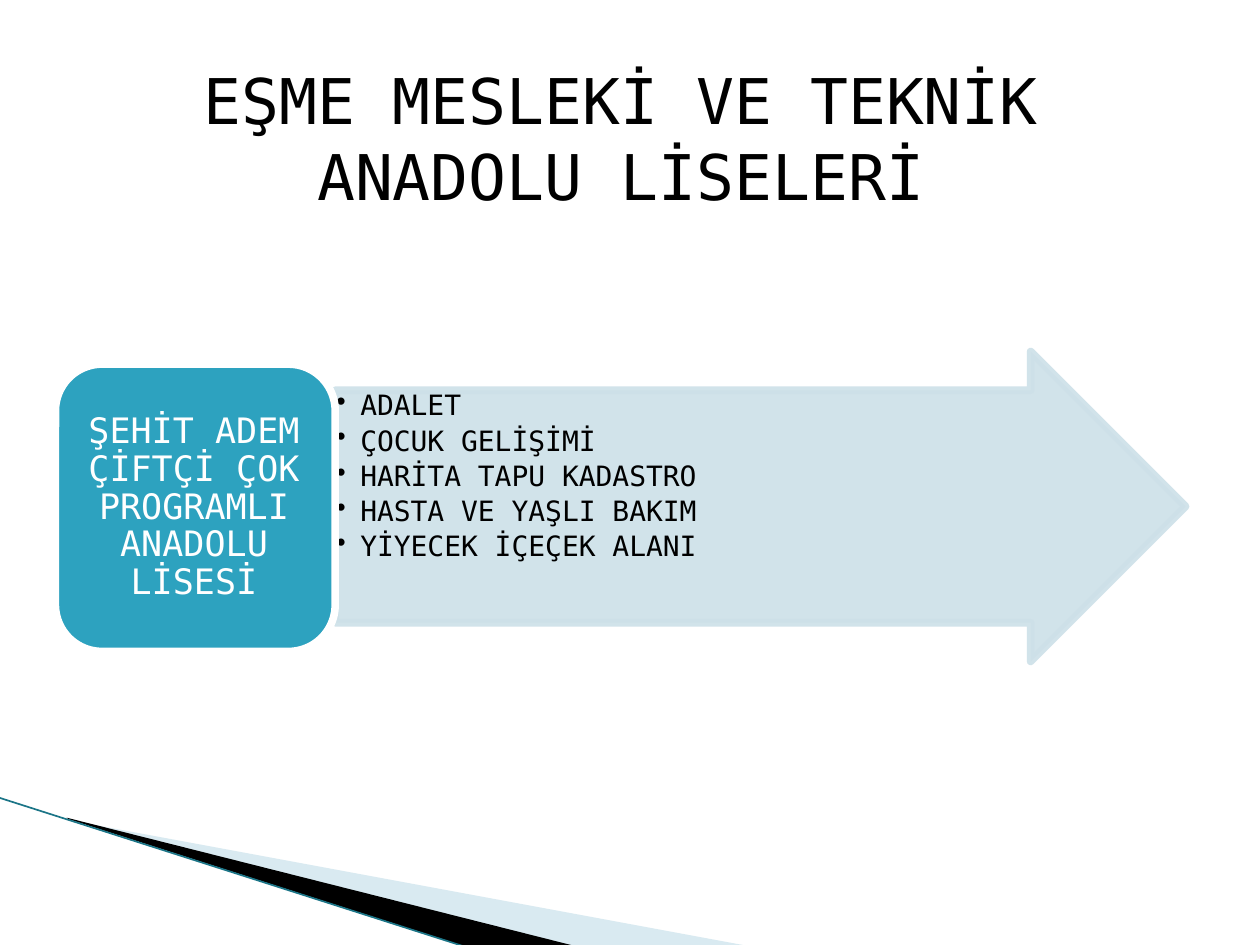
from dataclasses import dataclass

from lxml import etree
from pptx import Presentation
from pptx import util as u
from pptx.dml.color import RGBColor
from pptx.enum import shapes, text
from pptx.oxml.ns import qn

# Grid of 100 columns by 75 rows on a 10 by 7.5 inch slide
COLUMNS, ROWS = 100, 75
CELL = u.Inches(0.1)
FONT = "DejaVu Sans Mono"
BLACK, WHITE = "000000", "FFFFFF"
TEAL, DARK_TEAL = "2DA2BF", "1B7587"
PALE_BLUE, SOFT_BLUE = "CDE0E8", "A0CBDC"

TITLE = "EŞME MESLEKİ VE TEKNİK ANADOLU LİSELERİ"
SCHOOL = "ŞEHİT ADEM ÇİFTÇİ ÇOK PROGRAMLI ANADOLU LİSESİ"
FIELDS = [
    "ADALET",
    "ÇOCUK GELİŞİMİ",
    "HARİTA TAPU KADASTRO",
    "HASTA VE YAŞLI BAKIM",
    "YİYECEK İÇEÇEK ALANI",
]


@dataclass(frozen=True)
class Box:
    column: float
    row: float
    columns: float
    rows: float

    def lengths(self) -> list[int]:
        return [cells(n) for n in (self.column, self.row, self.columns, self.rows)]


@dataclass(frozen=True)
class Wedge:
    points: list[tuple[float, float]]
    color: str
    opacity: int = 100


@dataclass(frozen=True)
class Label:
    box: Box
    lines: list[str]
    size: int
    color: str = BLACK
    insets: tuple[float, float] = (0.1, 0.05)
    anchor: text.MSO_ANCHOR = text.MSO_ANCHOR.TOP
    spacing: float = 1.0
    space_after: float = 0
    bulleted: bool = False


WEDGES = [
    Wedge([(5.5, 65.1), (59.5, 75.1), (45.6, 75.1), (5.5, 65)], SOFT_BLUE, 40),
    Wedge([(5.3, 64.9), (45.7, 75.1), (37.2, 75.2), (5.4, 65)], BLACK),
]
LABELS = [
    Label(Box(26.6, 31, 58.3, 18.4), FIELDS, 16, insets=(0.01, 0.01),
          spacing=0.9, space_after=2.8, bulleted=True),
    Label(Box(5.4, 30, 20, 20.6), [SCHOOL], 20, WHITE, (0.08, 0.04),
          text.MSO_ANCHOR.MIDDLE, spacing=0.9),
    Label(Box(7.5, 4.4, 83.5, 13.1), [TITLE], 36),
]


def cells(count: float) -> int:
    return round(count * CELL)


def paint(color_format, color: str, opacity: int = 100) -> None:
    """Make a fill solid, with its opacity in percent."""
    color_format.solid()
    color_format.fore_color.rgb = RGBColor.from_string(color)
    if opacity < 100:
        solid = color_format._xPr.find(qn("a:solidFill"))
        etree.SubElement(solid[0], qn("a:alpha"), val=str(opacity * 1000))


def add_wedge(slide, wedge: Wedge) -> None:
    start, *others = [(cells(x), cells(y)) for x, y in wedge.points]
    builder = slide.shapes.build_freeform(*start)
    builder.add_line_segments(others, close=True)
    shape = builder.convert_to_shape()
    shape.shadow.inherit = False
    paint(shape.fill, wedge.color, wedge.opacity)
    shape.line.fill.background()


def add_edge(slide) -> None:
    ends = [cells(n) for n in (-0.1, 63.3, 37.1, 75.2)]
    edge = slide.shapes.add_connector(shapes.MSO_CONNECTOR.STRAIGHT, *ends)
    paint(edge.line.fill, DARK_TEAL)
    edge.line.width = u.Pt(0.95)
    etree.SubElement(edge._element.spPr, qn("a:effectLst"))


def add_panel(slide, kind: shapes.MSO_SHAPE, box: Box, fill: str, line: str,
              opacity: int = 100):
    panel = slide.shapes.add_shape(kind, *box.lengths())
    panel.shadow.inherit = False
    paint(panel.fill, fill, opacity)
    paint(panel.line.fill, line, opacity)
    panel.line.width = u.Pt(4.33)
    return panel


def add_bullet(paragraph) -> None:
    properties = paragraph._p.get_or_add_pPr()
    indent = u.Inches(0.19)
    properties.set("marL", str(indent))
    properties.set("indent", str(-indent))
    etree.SubElement(properties, qn("a:buChar"), char="•")


def add_label(slide, label: Label) -> None:
    frame = slide.shapes.add_textbox(*label.box.lengths()).text_frame
    frame.word_wrap = True
    frame.vertical_anchor = label.anchor
    side, end = (u.Inches(inset) for inset in label.insets)
    frame.margin_left = frame.margin_right = side
    frame.margin_top = frame.margin_bottom = end
    frame.text = "\n".join(label.lines)
    for paragraph in frame.paragraphs:
        paragraph.line_spacing = label.spacing
        paragraph.space_after = u.Pt(label.space_after)
        if label.bulleted:
            add_bullet(paragraph)
        else:
            paragraph.alignment = text.PP_ALIGN.CENTER
        for run in paragraph.runs:
            run.font.size = u.Pt(label.size)
            run.font.name = FONT
            paint(run.font.fill, label.color)


def main() -> None:
    deck = Presentation()
    deck.slide_width, deck.slide_height = cells(COLUMNS), cells(ROWS)
    slide = deck.slides.add_slide(deck.slide_layouts[6])
    for wedge in WEDGES:
        add_wedge(slide, wedge)
    add_edge(slide)
    arrow = add_panel(slide, shapes.MSO_SHAPE.RIGHT_ARROW,
                      Box(26.6, 27.9, 67.5, 24.6), PALE_BLUE, PALE_BLUE, 90)
    arrow.adjustments[0], arrow.adjustments[1] = 0.75, 0.5
    fields, *front_labels = LABELS
    add_label(slide, fields)
    add_panel(slide, shapes.MSO_SHAPE.ROUNDED_RECTANGLE,
              Box(4.4, 28.9, 22.2, 22.8), TEAL, WHITE)
    for label in front_labels:
        add_label(slide, label)
    deck.save("out.pptx")


if __name__ == "__main__":
    main()
